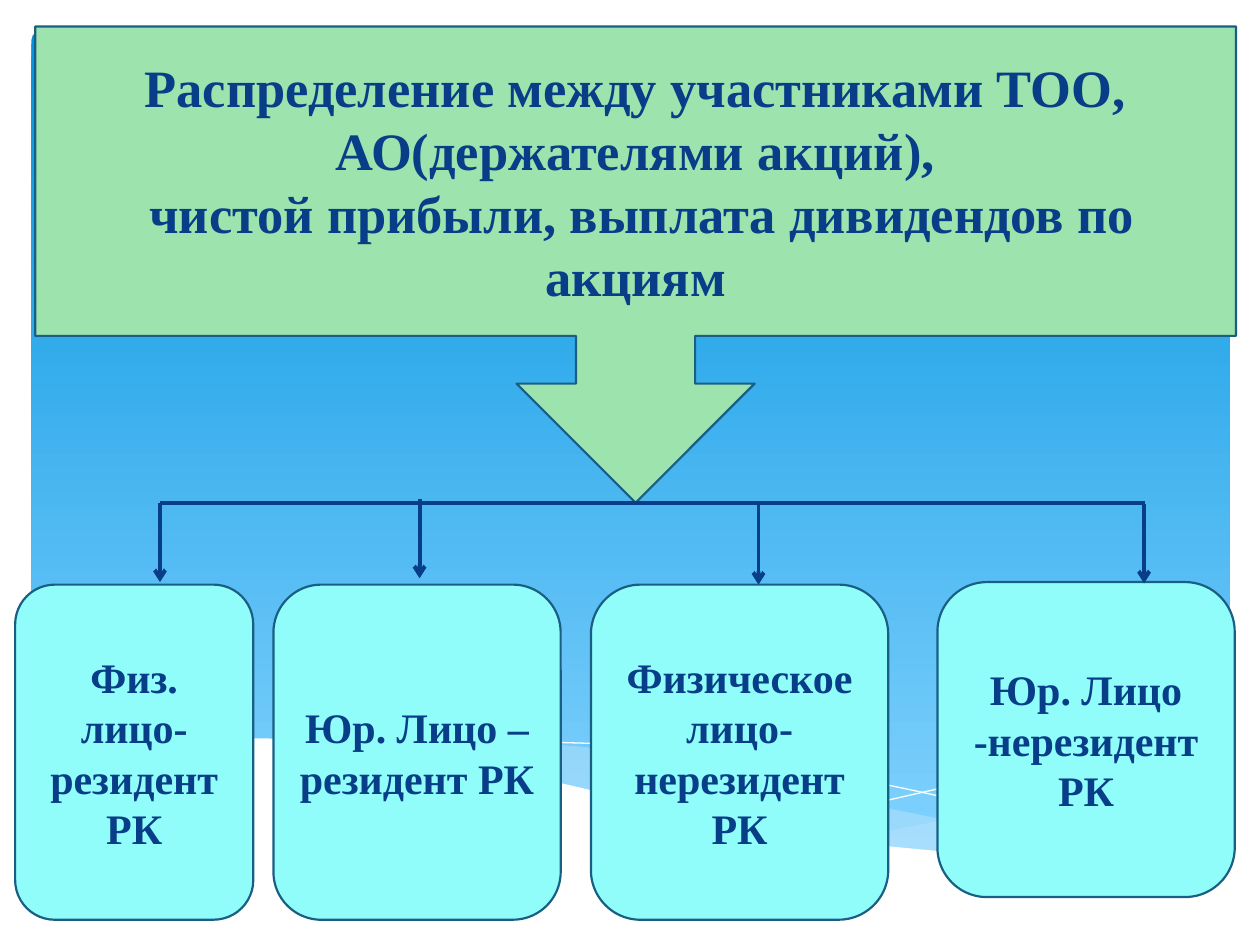
from dataclasses import dataclass
from lxml.etree import SubElement
from pptx import Presentation
from pptx.dml.color import RGBColor
from pptx.enum.shapes import MSO_CONNECTOR, MSO_SHAPE
from pptx.enum.text import MSO_ANCHOR, MSO_AUTO_SIZE, PP_ALIGN
from pptx.oxml.ns import qn
from pptx.util import Inches, Pt


@dataclass(frozen=True)
class Theme:
    font: str = "Times New Roman"
    ink: str = "073E87"
    outline: str = "195F84"
    callout: str = "9DE3AE"
    card: str = "91FDFA"
    sky_top: str = "0293E0"
    sky_bottom: str = "83D3FE"
    mist: str = "C6E7FC"
    white: str = "FFFFFF"
    title_size: int = 30
    card_size: int = 24
    outline_width: float = 1.25
    bar_width: float = 2.5
    arrow_width: float = 2.25


THEME = Theme()
COLUMNS, ROWS = 100, 75

TITLE = [
    "Распределение между участниками ТОО, АО(держателями акций),",
    " чистой прибыли, выплата дивидендов по акциям",
]
RECIPIENTS = [
    {"text": "Физ. лицо-резидент РК", "box": (1.2, 46.4, 18.9, 26.6), "arrow": (12.7, 39.9)},
    {"text": "Юр. Лицо – резидент РК", "box": (21.7, 46.4, 22.8, 26.6), "arrow": (33.3, 39.6)},
    {"text": "Физическое лицо-нерезидент РК", "box": (46.9, 46.4, 23.6, 26.6), "arrow": (60.2, 40.1)},
    {"text": "Юр. Лицо -нерезидент РК", "box": (74.4, 46.2, 23.6, 25), "arrow": (90.8, 40)},
]
SKY_BOX = (2.5, 2.5, 95.1, 66)
CALLOUT_BOX = (2.8, 2.1, 95.3, 37.8)
TITLE_BOX = (2.8, 2.1, 95.3, 24.5)
BAR_LEFT, BAR_RIGHT, BAR_TOP = 12.7, 90.9, 39.9
ARROW_LENGTH = 6.3

WAVES = [
    {"fill": THEME.mist, "opacity": 29, "points": [
        (97.6, 60.1), (93.6, 60.9), (89.2, 61.8), (86.2, 62.5), (80.6, 63.9), (75.4, 65),
        (70.7, 65.9), (66.2, 66.7), (70.6, 67.3), (74.6, 67.7), (78.2, 67.9), (81.5, 68),
        (85.5, 67.8), (89, 67.4), (92.2, 66.7), (95.1, 65.9), (97.7, 64.9), (97.7, 60.1)]},
    {"fill": THEME.mist, "opacity": 40, "points": [
        (89.4, 67.5), (83.8, 66.7), (77.6, 65.6), (70.7, 64.2), (63, 62.4), (58.4, 61.3),
        (54.2, 60.4), (50.2, 59.8), (46.5, 59.3), (42, 58.9), (38, 58.7), (34.5, 58.8),
        (31.4, 59), (28.7, 59.3), (32.3, 59.8), (36.3, 60.4), (40.5, 61.3), (45, 62.4),
        (49.1, 63.4), (53, 64.2), (56.7, 65), (60.2, 65.7), (65.1, 66.6), (69.6, 67.2),
        (73.7, 67.7), (77.4, 67.9), (80.8, 68), (84.9, 67.9), (89.4, 67.5)]},
    {"points": [
        (31, 59.7), (34.4, 59.2), (38.8, 58.9), (43.3, 58.9), (46.9, 59), (51.1, 59.4),
        (55.7, 59.8), (60.9, 60.6), (66.6, 61.5), (72.8, 62.8), (79.6, 64.3), (87, 66.2),
        (90.8, 67.3)]},
    {"points": [
        (61.4, 65.9), (65.3, 64.8), (69.6, 63.7), (74.9, 62.5), (80.7, 61.2), (86.7, 60),
        (89.7, 59.6), (93.9, 59), (97.6, 58.7)]},
    {"fill": THEME.white, "opacity": 100, "points": [
        (97.7, 64.8), (95, 65.8), (92, 66.7), (88.7, 67.3), (85, 67.7), (80.9, 67.9),
        (76.1, 67.7), (70.8, 67.2), (64.8, 66.4), (57.9, 65.1), (50.3, 63.5), (44.7, 62.2),
        (39.1, 60.9), (34, 59.9), (29.2, 59.2), (25, 58.8), (21.1, 58.6), (17.7, 58.6),
        (14.6, 58.7), (11.9, 58.9), (9.5, 59.3), (7.6, 59.7), (5.9, 60.1), (4.6, 60.5),
        (2.9, 61.2), (2.3, 61.5), (2.3, 73.1), (97.7, 73.1)]},
]

deck = Presentation()
deck.slide_width, deck.slide_height = Inches(10), Inches(7.5)
slide = deck.slides.add_slide(deck.slide_layouts[5])


def across(columns):
    return round(deck.slide_width * columns / COLUMNS)


def down(rows):
    return round(deck.slide_height * rows / ROWS)


def place(box):
    left, top, width, height = box
    return across(left), down(top), across(width), down(height)


def paint(shape, fill=None, line=None, width=THEME.outline_width):
    shape.shadow.inherit = False
    if fill:
        shape.fill.solid()
        shape.fill.fore_color.rgb = RGBColor.from_string(fill)
    else:
        shape.fill.background()
    if line:
        shape.line.color.rgb = RGBColor.from_string(line)
        shape.line.width = Pt(width)
    else:
        shape.line.fill.background()


def write(frame, paragraphs, size):
    frame.word_wrap = True
    frame.auto_size = MSO_AUTO_SIZE.NONE
    frame.vertical_anchor = MSO_ANCHOR.MIDDLE
    for index, text in enumerate(paragraphs):
        paragraph = frame.add_paragraph() if index else frame.paragraphs[0]
        paragraph.alignment = PP_ALIGN.CENTER
        run = paragraph.add_run()
        run.text = text
        run.font.name = THEME.font
        run.font.size = Pt(size)
        run.font.bold = True
        run.font.color.rgb = RGBColor.from_string(THEME.ink)


def draw_wave(points, fill=None, opacity=100):
    corners = [(across(x), down(y)) for x, y in points]
    outline = slide.shapes.build_freeform(*corners[0])
    outline.add_line_segments(corners[1:], close=bool(fill))
    wave = outline.convert_to_shape()
    paint(wave, fill, None if fill else THEME.white, 0)
    if opacity < 100:
        color = wave.element.spPr.find(qn("a:solidFill"))[0]
        SubElement(color, qn("a:alpha"), val=str(opacity * 1000))


def connect(start, end, width, arrow=False):
    link = slide.shapes.add_connector(
        MSO_CONNECTOR.STRAIGHT, across(start[0]), down(start[1]), across(end[0]), down(end[1]))
    link.line.color.rgb = RGBColor.from_string(THEME.ink)
    link.line.width = Pt(width)
    if arrow:
        SubElement(link.line._get_or_add_ln(), qn("a:tailEnd"), type="arrow")
    SubElement(link.element.spPr, qn("a:effectLst"))


sky = slide.shapes.add_shape(MSO_SHAPE.ROUNDED_RECTANGLE, *place(SKY_BOX))
sky.adjustments[0] = 0.01
paint(sky)
sky.fill.gradient()
sky.fill.gradient_angle = 270
for stop, position, color in zip(
        sky.fill.gradient_stops, (0, 1), (THEME.sky_top, THEME.sky_bottom)):
    stop.position = position
    stop.color.rgb = RGBColor.from_string(color)

for wave in WAVES:
    draw_wave(**wave)

callout = slide.shapes.add_shape(MSO_SHAPE.DOWN_ARROW_CALLOUT, *place(CALLOUT_BOX))
paint(callout, THEME.callout, THEME.outline)
title = slide.shapes.title
title.left, title.top, title.width, title.height = place(TITLE_BOX)
write(title.text_frame, TITLE, THEME.title_size)
callout.element.addnext(title.element)

for recipient in RECIPIENTS:
    card = slide.shapes.add_shape(MSO_SHAPE.ROUNDED_RECTANGLE, *place(recipient["box"]))
    paint(card, THEME.card, THEME.outline)
    write(card.text_frame, [recipient["text"]], THEME.card_size)

connect((BAR_LEFT, BAR_TOP), (BAR_RIGHT, BAR_TOP), THEME.bar_width)
for recipient in RECIPIENTS:
    x, top = recipient["arrow"]
    connect((x, top), (x, top + ARROW_LENGTH), THEME.arrow_width, arrow=True)

deck.save("out.pptx")
